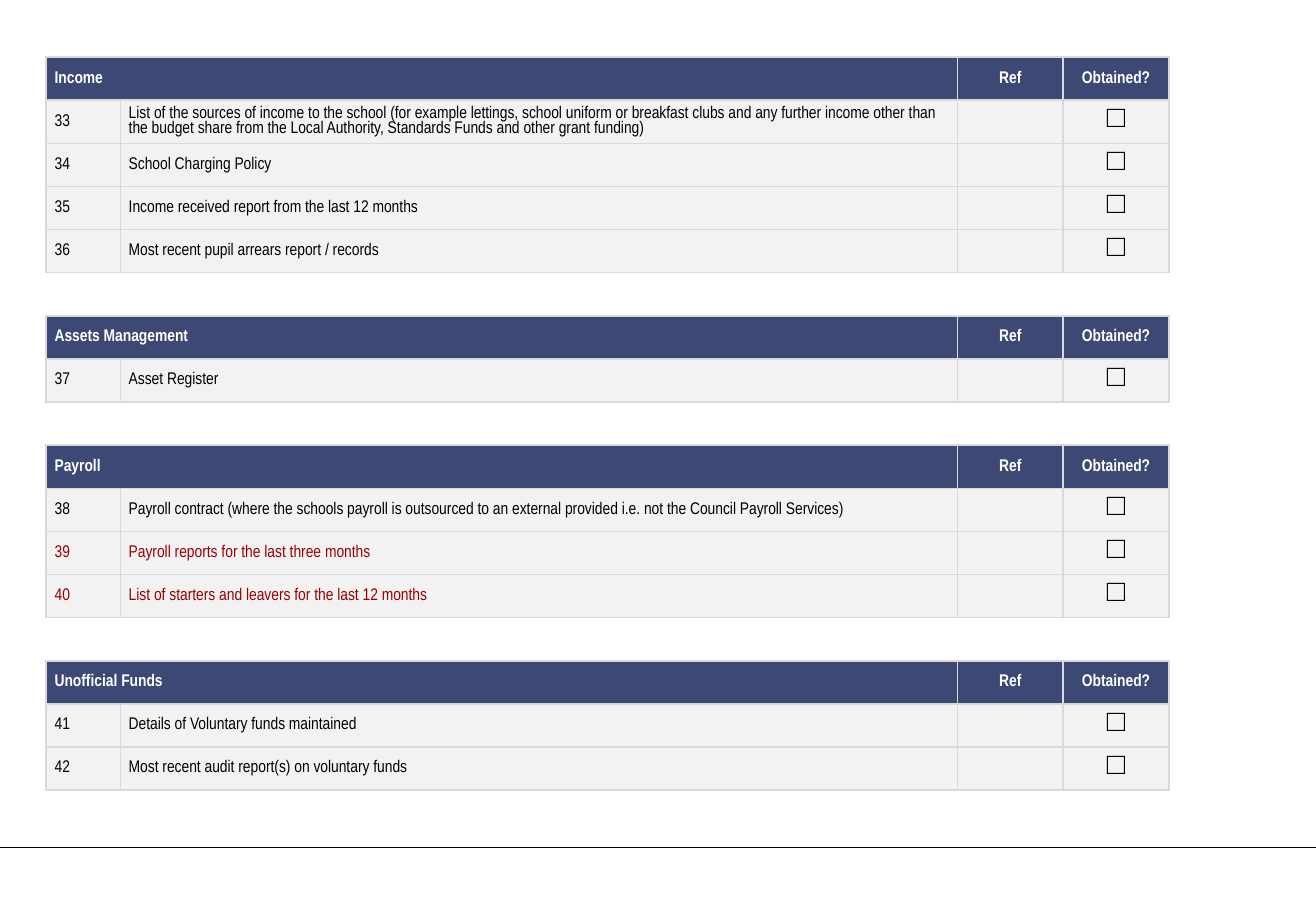
from lxml.etree import SubElement
from pptx import Presentation
from pptx.dml.color import RGBColor
from pptx.enum.shapes import MSO_CONNECTOR
from pptx.enum.text import MSO_ANCHOR, PP_ALIGN
from pptx.oxml.ns import qn
from pptx.util import Inches, Pt

NAVY = RGBColor(0x3E, 0x48, 0x75)
PALE = RGBColor(0xF2, 0xF2, 0xF2)
GRID = RGBColor(0xD9, 0xD9, 0xD9)
WHITE = RGBColor(0xFF, 0xFF, 0xFF)
BLACK = RGBColor(0, 0, 0)
RED = RGBColor(0x99, 0, 0)

LEFT, TOP = Inches(0.38), Inches(0.47)
ROW = Pt(25.56)
COLUMNS = [Inches(w) for w in (0.61, 6.89, 0.87, 0.87)]
FOOTER_LINE = 0.93  # share of the slide height

FIRST_NUMBER = 33
RED_NUMBERS = {39, 40}
SECTIONS = [
    ("Income", [
        "List of the sources of income to the school (for example lettings, "
        "school uniform or breakfast clubs and any further income other than "
        "the budget share from the Local Authority, Standards Funds and other "
        "grant funding)",
        "School Charging Policy",
        "Income received report from the last 12 months",
        "Most recent pupil arrears report / records",
    ]),
    ("Assets Management", ["Asset Register"]),
    ("Payroll", [
        "Payroll contract (where the schools payroll is outsourced to an "
        "external provided i.e. not the Council Payroll Services)",
        "Payroll reports for the last three months",
        "List of starters and leavers for the last 12 months",
    ]),
    ("Unofficial Funds", [
        "Details of Voluntary funds maintained",
        "Most recent audit report(s) on voluntary funds",
    ]),
]


class Checklist:
    """Draws checklist tables on a grid of equal rows."""

    font, size = "Arial Narrow", Pt(10)
    box_font, box_size = "Arial", Pt(18)

    def __init__(self, prs):
        self.prs = prs
        self.s = prs.slides.add_slide(prs.slide_layouts[6])

    def rule(self, share):
        """Draw a full-width line at a share of the slide height."""
        y = round(self.prs.slide_height * share)
        line = self.s.shapes.add_connector(
            MSO_CONNECTOR.STRAIGHT, 0, y, self.prs.slide_width, y)
        line.line.color.rgb = BLACK
        line.line.width = Pt(0.5)
        SubElement(line._element.spPr, qn("a:effectLst"))

    def borders(self, cell):
        tcPr = cell._tc.get_or_add_tcPr()
        for i, side in enumerate(("lnL", "lnR", "lnT", "lnB")):
            ln = tcPr.makeelement(qn(f"a:{side}"), {"w": str(Pt(1))})
            fill = SubElement(ln, qn("a:solidFill"))
            SubElement(fill, qn("a:srgbClr"), val=str(GRID))
            tcPr.insert(i, ln)

    def style(self, cell, fill):
        cell.fill.solid()
        cell.fill.fore_color.rgb = fill
        cell.margin_left = cell.margin_right = Inches(0.07)
        cell.margin_top = cell.margin_bottom = 0
        cell.vertical_anchor = MSO_ANCHOR.MIDDLE
        self.borders(cell)

    def text(self, cell, text, color, bold=False, align=PP_ALIGN.LEFT):
        p = cell.text_frame.paragraphs[0]
        p.alignment = align
        r = p.add_run()
        r.text = text
        r.font.name, r.font.size = self.font, self.size
        r.font.bold = bold
        r.font.color.rgb = color
        return r

    def checkbox(self, cell):
        r = self.text(cell, "□", BLACK, align=PP_ALIGN.CENTER)
        r.font.name, r.font.size = self.box_font, self.box_size
        cell.vertical_anchor = MSO_ANCHOR.TOP

    def section(self, row, title, items, number):
        """Add one table starting at a grid row, numbering its items."""
        rows = len(items) + 1
        table = self.s.shapes.add_table(
            rows, len(COLUMNS), LEFT, TOP + row * ROW,
            sum(COLUMNS), rows * ROW).table
        table.first_row = table.horz_banding = False
        for column, width in zip(table.columns, COLUMNS):
            column.width = width
        for i, table_row in enumerate(table.rows):
            table_row.height = ROW
            for cell in table_row.cells:
                self.style(cell, PALE if i else NAVY)

        table.cell(0, 0).merge(table.cell(0, 1))
        self.text(table.cell(0, 0), title, WHITE, bold=True)
        for col, label in ((2, "Ref"), (3, "Obtained?")):
            self.text(table.cell(0, col), label, WHITE, True, PP_ALIGN.CENTER)

        for i, item in enumerate(items, 1):
            n = number + i - 1
            color = RED if n in RED_NUMBERS else BLACK
            self.text(table.cell(i, 0), str(n), color)
            self.text(table.cell(i, 1), item, color)
            self.checkbox(table.cell(i, 3))


def main():
    prs = Presentation()
    prs.slide_width, prs.slide_height = Inches(10.83), Inches(7.5)
    checklist = Checklist(prs)
    checklist.rule(FOOTER_LINE)
    row, number = 0, FIRST_NUMBER
    for title, items in SECTIONS:
        checklist.section(row, title, items, number)
        row += len(items) + 2  # header and one blank row
        number += len(items)
    prs.save("out.pptx")


if __name__ == "__main__":
    main()
